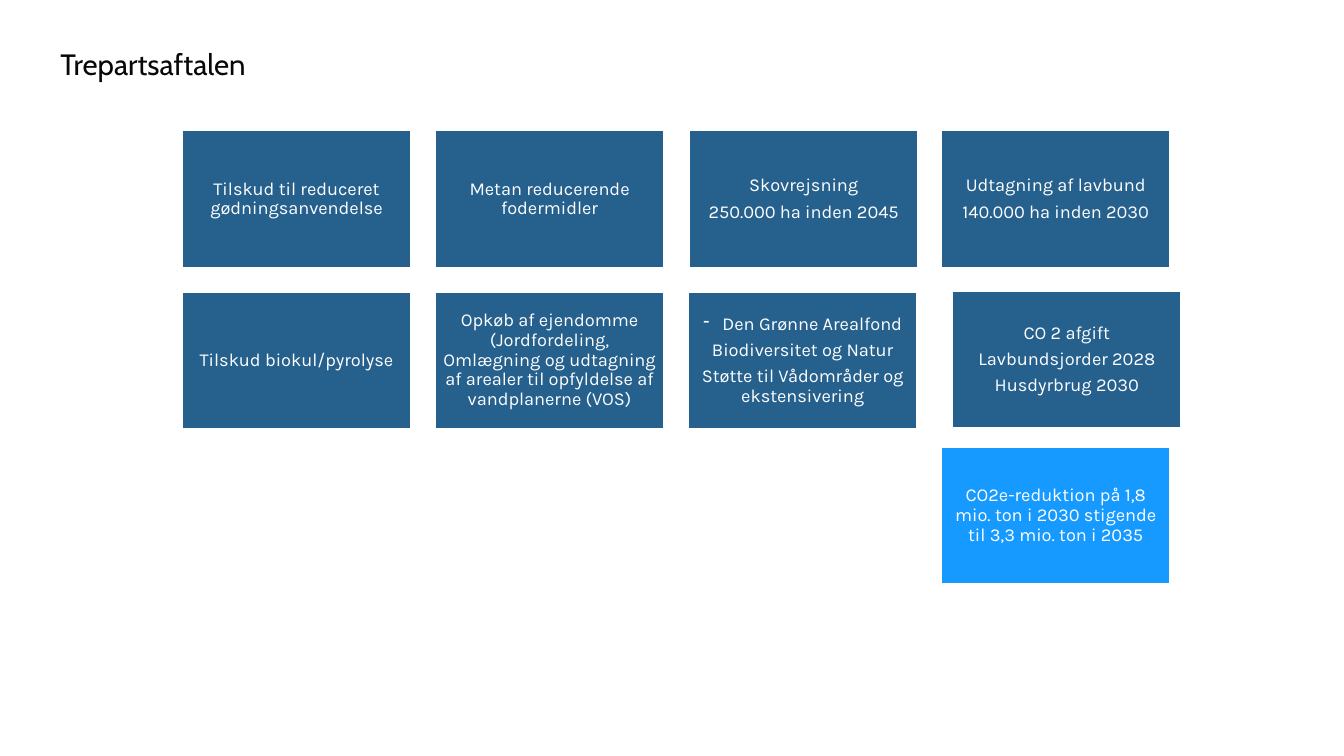
from dataclasses import dataclass

from lxml import etree
from pptx import Presentation
from pptx import util as u
from pptx.dml.color import RGBColor
from pptx.enum import shapes, text
from pptx.oxml import ns

WHITE = "FFFFFF"
MEASURE_BLUE = "26618E"
RESULT_BLUE = "169AFF"
CARD_WIDTH, CARD_HEIGHT = 2.28, 1.37
FIRST_LEFT, COLUMN_STEP = 1.8, 2.51
FIRST_TOP, ROW_STEP = 1.29, 1.6
DASH_INDENT = 0.19


@dataclass
class Card:
    column: int
    row: int
    lines: list[str]
    fill: str = MEASURE_BLUE
    shift_x: float = 0
    shift_y: float = 0
    dashed_first: bool = False


CARDS = [
    Card(0, 0, ["Tilskud til reduceret gødningsanvendelse"]),
    Card(1, 0, ["Metan reducerende fodermidler"]),
    Card(2, 0, ["Skovrejsning", "250.000 ha inden 2045"], shift_x=0.01),
    Card(3, 0, ["Udtagning af lavbund", "140.000 ha inden 2030"]),
    Card(0, 1, ["Tilskud biokul/pyrolyse"]),
    Card(1, 1, ["Opkøb af ejendomme (Jordfordeling, Omlægning og udtagning "
                "af arealer til opfyldelse af vandplanerne (VOS)"]),
    Card(2, 1, ["Den Grønne Arealfond", "Biodiversitet og Natur",
                "Støtte til Vådområder og ekstensivering"], dashed_first=True),
    Card(3, 2, ["CO2e-reduktion på 1,8 mio. ton i 2030 stigende "
                "til 3,3 mio. ton i 2035"], fill=RESULT_BLUE, shift_y=-0.06),
    Card(3, 1, ["CO 2 afgift", "Lavbundsjorder 2028", "Husdyrbrug 2030"],
         shift_x=0.11, shift_y=-0.01),
]


def color(value: str) -> RGBColor:
    return RGBColor.from_string(value)


def add_run(paragraph, words: str, font: str, size: float, ink: str) -> None:
    run = paragraph.add_run()
    run.text = words
    run.font.name = font
    run.font.size = u.Pt(size)
    run.font.color.rgb = color(ink)


def set_up_frame(frame, inset: float) -> None:
    frame.word_wrap = True
    frame.vertical_anchor = text.MSO_ANCHOR.MIDDLE
    frame.margin_left = frame.margin_right = u.Inches(inset)
    frame.margin_top = frame.margin_bottom = u.Inches(inset)


def add_dash(paragraph) -> None:
    properties = paragraph._p.get_or_add_pPr()
    properties.set("marL", str(u.Inches(DASH_INDENT)))
    properties.set("indent", str(-u.Inches(DASH_INDENT)))
    etree.SubElement(properties, ns.qn("a:buChar")).set("char", "-")


def add_title(slide, words: str) -> None:
    title = slide.shapes.add_textbox(
        u.Inches(0.6), u.Inches(0.4), u.Inches(12.21), u.Inches(0.47))
    set_up_frame(title.text_frame, 0)
    add_run(title.text_frame.paragraphs[0], words, "Cabin", 21, "080808")


def add_card(slide, card: Card) -> None:
    box = slide.shapes.add_shape(
        shapes.MSO_SHAPE.RECTANGLE,
        u.Inches(FIRST_LEFT + card.column * COLUMN_STEP + card.shift_x),
        u.Inches(FIRST_TOP + card.row * ROW_STEP + card.shift_y),
        u.Inches(CARD_WIDTH), u.Inches(CARD_HEIGHT))
    box.shadow.inherit = False
    box.fill.solid()
    box.fill.fore_color.rgb = color(card.fill)
    box.line.color.rgb = color(WHITE)
    box.line.width = u.Pt(2)
    frame = box.text_frame
    set_up_frame(frame, 0.05)
    for index, line in enumerate(card.lines):
        paragraph = frame.add_paragraph() if index else frame.paragraphs[0]
        paragraph.alignment = text.PP_ALIGN.CENTER
        paragraph.line_spacing = 0.9
        paragraph.space_after = u.Pt(4.55)
        if card.dashed_first and index == 0:
            add_dash(paragraph)
        add_run(paragraph, line, "Karla", 13, WHITE)


def main() -> None:
    deck = Presentation()
    deck.slide_width = u.Inches(13.33)
    deck.slide_height = u.Inches(7.5)
    slide = deck.slides.add_slide(deck.slide_layouts[6])
    add_title(slide, "Trepartsaftalen")
    for card in CARDS:
        add_card(slide, card)
    deck.save("out.pptx")


if __name__ == "__main__":
    main()
